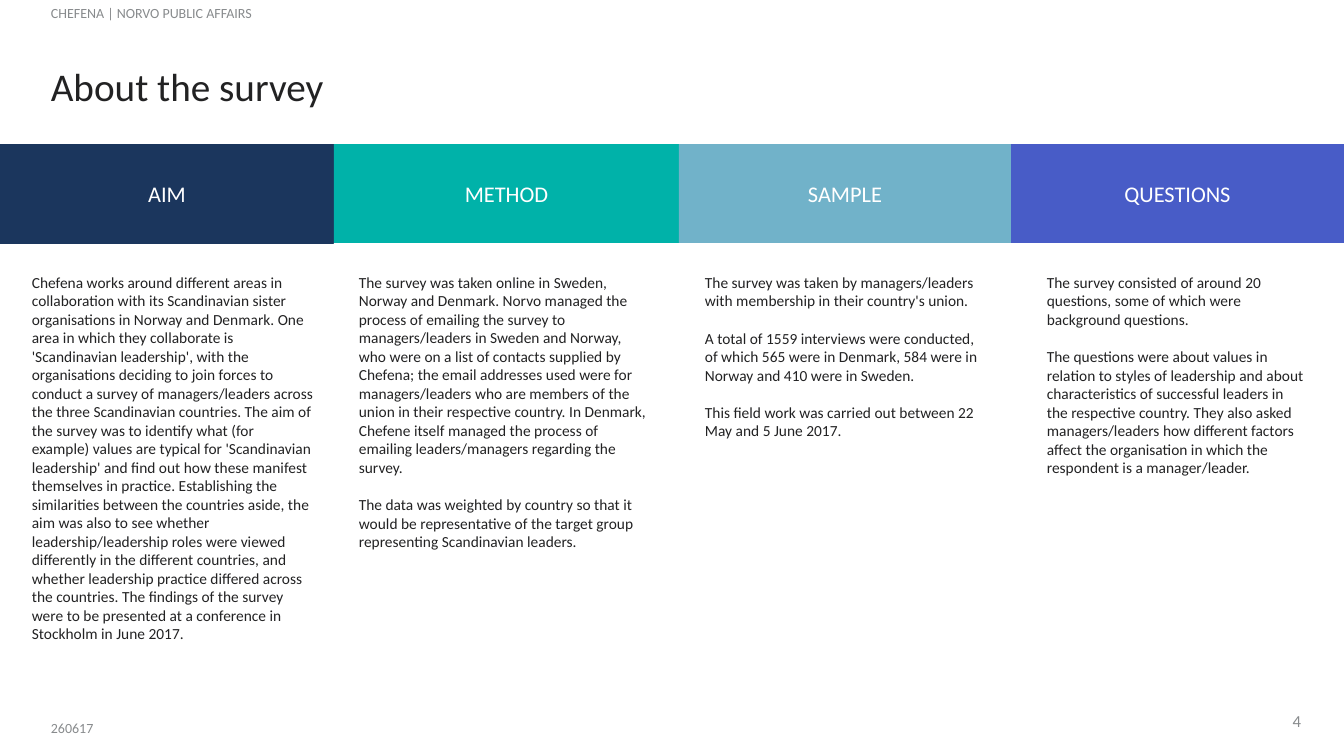
from pptx import Presentation
from pptx import util as u
from pptx.dml.color import RGBColor
from pptx.enum import shapes, text

SCALE = 9525 / 1.05  # EMU in one px, at 100.8 px to the inch
GREY, INK, WHITE = "888B8D", "222223", "FFFFFF"
BAND_TOP, BAND_H, BODY_TOP = 144, 99, 268

# band edges, colour, heading, body left, width and height, paragraphs
COLUMNS = [
    (0, 334, "1B365D", "AIM", 22, 302, 383, [
        "Chefena works around different areas in collaboration with its "
        "Scandinavian sister organisations in Norway and Denmark. One area in "
        "which they collaborate is 'Scandinavian leadership', with the "
        "organisations deciding to join forces to conduct a survey of "
        "managers/leaders across the three Scandinavian countries. The aim of "
        "the survey was to identify what (for example) values are typical for "
        "'Scandinavian leadership' and find out how these manifest themselves "
        "in practice. Establishing the similarities between the countries "
        "aside, the aim was also to see whether leadership/leadership roles "
        "were viewed differently in the different countries, and whether "
        "leadership practice differed across the countries. The findings of "
        "the survey were to be presented at a conference in Stockholm in June "
        "2017."]),
    (334, 679, "00B2A9", "METHOD", 349, 312, 290, [
        "The survey was taken online in Sweden, Norway and Denmark. Norvo "
        "managed the process of emailing the survey to managers/leaders in "
        "Sweden and Norway, who were on a list of contacts supplied by "
        "Chefena; the email addresses used were for managers/leaders who are "
        "members of the union in their respective country. In Denmark, Chefene "
        "itself managed the process of emailing leaders/managers regarding the "
        "survey.",
        "The data was weighted by country so that it would be representative "
        "of the target group representing Scandinavian leaders."]),
    (679, 1011, "71B2C9", "SAMPLE", 695, 298, 178, [
        "The survey was taken by managers/leaders with membership in their "
        "country's union.",
        "A total of 1559 interviews were conducted, of which 565 were in "
        "Denmark, 584 were in Norway and 410 were in Sweden.",
        "This field work was carried out between 22 May and 5 June 2017."]),
    (1011, 1344, "485CC7", "QUESTIONS", 1037, 280, 216, [
        "The survey consisted of around 20 questions, some of which were "
        "background questions.",
        "The questions were about values in relation to styles of leadership "
        "and about characteristics of successful leaders in the respective "
        "country. They also asked managers/leaders how different factors "
        "affect the organisation in which the respondent is a "
        "manager/leader."]),
]


def px(n):
    return u.Emu(round(n * SCALE))


def rgb(code):
    return RGBColor.from_string(code)


class Deck:
    font = "Calibri"

    def __init__(self, wide, high):
        self.file = Presentation()
        self.file.slide_width, self.file.slide_height = px(wide), px(high)
        self.slide = self.file.slides.add_slide(self.file.slide_layouts[6])

    def fill_text(self, frame, lines, size, color, align, gap=0):
        """Fill a text frame with one paragraph a line, gap points apart."""
        frame.word_wrap = True
        for i, line in enumerate(lines):
            para = frame.paragraphs[0] if i == 0 else frame.add_paragraph()
            para.text = line
            para.alignment = align
            para.font.name, para.font.size = self.font, u.Pt(size)
            para.font.color.rgb = rgb(color)
            if line != lines[-1]:
                para.space_after = u.Pt(gap)

    def label(self, box, lines, size, color, align=text.PP_ALIGN.LEFT, gap=0):
        shape = self.slide.shapes.add_textbox(*map(px, box))
        self.fill_text(shape.text_frame, lines, size, color, align, gap)
        return shape.text_frame

    def band(self, box, fill, title):
        shape = self.slide.shapes.add_shape(
            shapes.MSO_SHAPE.RECTANGLE, *map(px, box))
        shape.shadow.inherit = False
        shape.fill.solid()
        shape.fill.fore_color.rgb = rgb(fill)
        shape.line.fill.background()
        shape.text_frame.vertical_anchor = text.MSO_ANCHOR.MIDDLE
        self.fill_text(
            shape.text_frame, [title], 16, WHITE, text.PP_ALIGN.CENTER)
        return shape


def main():
    deck = Deck(1344, 756)
    deck.label((1197, 706, 114, 30), ["4"], 12, GREY, text.PP_ALIGN.RIGHT)
    deck.label((41, 715, 114, 27), ["260617"], 10, GREY)
    deck.label((41, 0, 243, 27), ["CHEFENA | NORVO PUBLIC AFFAIRS"], 10, GREY)

    for left, right, fill, head, x, w, h, lines in COLUMNS:
        band = deck.band((left, BAND_TOP, right - left, BAND_H), fill, head)
        if head == "AIM":
            band.line.color.rgb = rgb(fill)
            band.line.width = u.Pt(0.75)
        deck.label((x, BODY_TOP, w, h), lines, 11, INK, gap=13.4)

    title = deck.label((41, 58, 1257, 61), ["About the survey"], 28, INK)
    title.vertical_anchor = text.MSO_ANCHOR.MIDDLE
    title.paragraphs[0].line_spacing = 0.9
    deck.file.save("out.pptx")


if __name__ == "__main__":
    main()
